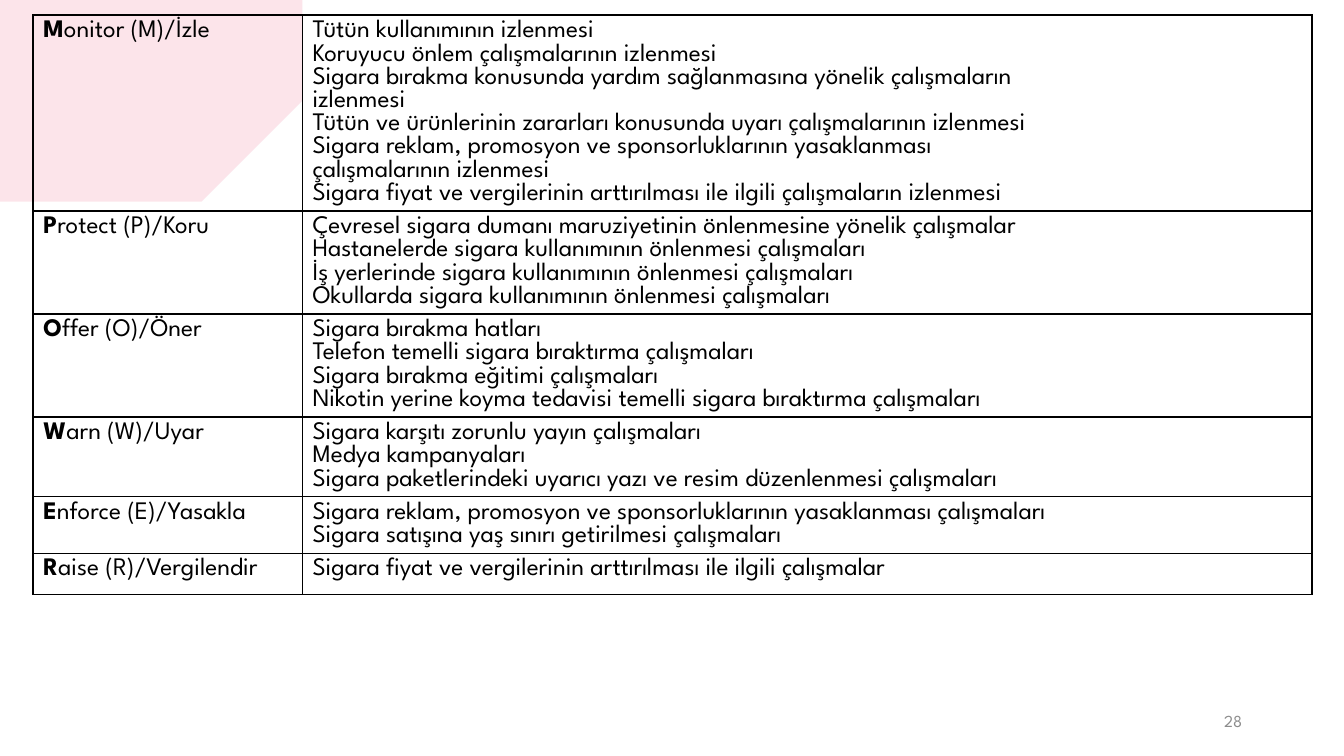
from lxml import etree
from pptx import Presentation
from pptx.dml.color import RGBColor
from pptx.enum.text import MSO_ANCHOR, PP_ALIGN
from pptx.oxml.ns import qn
from pptx.util import Inches, Pt

MIDDLE, RIGHT = MSO_ANCHOR.MIDDLE, PP_ALIGN.RIGHT

ROWS = [
    ("Monitor (M)/İzle", [
        "Tütün kullanımının izlenmesi",
        "Koruyucu önlem çalışmalarının izlenmesi",
        "Sigara bırakma konusunda yardım sağlanmasına yönelik çalışmaların",
        "izlenmesi",
        "Tütün ve ürünlerinin zararları konusunda uyarı çalışmalarının izlenmesi",
        "Sigara reklam, promosyon ve sponsorluklarının yasaklanması",
        "çalışmalarının izlenmesi",
        "Sigara fiyat ve vergilerinin arttırılması ile ilgili çalışmaların izlenmesi"]),
    ("Protect (P)/Koru", [
        "Çevresel sigara dumanı maruziyetinin önlenmesine yönelik çalışmalar",
        "Hastanelerde sigara kullanımının önlenmesi çalışmaları",
        "İş yerlerinde sigara kullanımının önlenmesi çalışmaları",
        "Okullarda sigara kullanımının önlenmesi çalışmaları"]),
    ("Offer (O)/Öner", [
        "Sigara bırakma hatları",
        "Telefon temelli sigara bıraktırma çalışmaları",
        "Sigara bırakma eğitimi çalışmaları",
        "Nikotin yerine koyma tedavisi temelli sigara bıraktırma çalışmaları"]),
    ("Warn (W)/Uyar", [
        "Sigara karşıtı zorunlu yayın çalışmaları",
        "Medya kampanyaları",
        "Sigara paketlerindeki uyarıcı yazı ve resim düzenlenmesi çalışmaları"]),
    ("Enforce (E)/Yasakla", [
        "Sigara reklam, promosyon ve sponsorluklarının yasaklanması çalışmaları",
        "Sigara satışına yaş sınırı getirilmesi çalışmaları"]),
    ("Raise (R)/Vergilendir", [
        "Sigara fiyat ve vergilerinin arttırılması ile ilgili çalışmalar"]),
]
PAGE_NUMBER = "28"

BRUSH_OUTLINE = [
    (0, 0.34), (0.25, 0.37), (1.51, 0.38), (2.48, 0.41), (2.8, 0.47),
    (2.53, 0.57), (2.62, 0.62), (2.38, 0.66), (2.75, 0.74), (2.51, 0.75),
    (2.73, 0.81), (2.9, 0.85), (2.63, 0.88), (3.3, 0.94), (3.18, 1.06),
    (2.83, 1.16), (2.74, 1.28), (3.08, 1.28), (2.69, 1.38), (2.52, 1.48),
    (2.63, 1.48), (1.97, 1.72), (1.02, 1.88), (0.65, 1.91), (0, 1.88),
]

THEME = {
    "font": "League Spartan", "body": 18, "small": 12,
    "text": "000000", "muted": "8C8C8C", "brush": "F07C98", "brush_alpha": 20,
    "outer": 1.5, "inner": 1,
}
COLS = [2.67, 10.01]
TABLE_LEFT, TABLE_TOP = 0.33, 0.15
LINE_HEIGHT, CELL_PADDING, MIN_ROW = 0.23, 0.1, 0.41


def add_run(p, text, size, color, bold=False):
    r = p.add_run()
    r.text = text
    r.font.name = THEME["font"]
    r.font.size = Pt(size)
    r.font.bold = bold
    r.font.color.rgb = RGBColor.from_string(color)


def add_brush(s):
    fb = s.shapes.build_freeform(*BRUSH_OUTLINE[0], scale=Inches(1))
    fb.add_line_segments(BRUSH_OUTLINE[1:], close=True)
    sp = fb.convert_to_shape()
    sp.shadow.inherit = False
    sp.line.fill.background()
    sp.fill.solid()
    sp.fill.fore_color.rgb = RGBColor.from_string(THEME["brush"])
    color = sp._element.spPr.find(qn("a:solidFill"))[0]
    etree.SubElement(color, qn("a:alpha"), val=str(THEME["brush_alpha"] * 1000))


def set_borders(cell, widths):
    tcPr = cell._tc.get_or_add_tcPr()
    for i, (side, width) in enumerate(widths.items()):
        ln = etree.Element(qn(f"a:ln{side}"), w=str(int(Pt(width))))
        fill = etree.SubElement(ln, qn("a:solidFill"))
        etree.SubElement(fill, qn("a:srgbClr"), val=THEME["text"])
        tcPr.insert(i, ln)


def add_policy_table(s):
    heights = [max(MIN_ROW, len(lines) * LINE_HEIGHT + CELL_PADDING) for _, lines in ROWS]
    table = s.shapes.add_table(len(ROWS), len(COLS), Inches(TABLE_LEFT), Inches(TABLE_TOP),
                               Inches(sum(COLS)), Inches(sum(heights))).table
    table.first_row = table.horz_banding = False
    for column, width in zip(table.columns, COLS):
        column.width = Inches(width)
    last_row, last_col = len(ROWS) - 1, len(COLS) - 1
    for i, (title, lines) in enumerate(ROWS):
        table.rows[i].height = Inches(heights[i])
        for j, paragraphs in enumerate(([title], lines)):
            cell = table.cell(i, j)
            cell.fill.background()
            outer = {"L": j == 0, "R": j == last_col, "T": i == 0, "B": i == last_row}
            set_borders(cell, {side: THEME["outer" if edge else "inner"]
                               for side, edge in outer.items()})
            tf = cell.text_frame
            for k, text in enumerate(paragraphs):
                p = tf.add_paragraph() if k else tf.paragraphs[0]
                if j == 0:
                    add_run(p, text[0], THEME["body"], THEME["text"], True)
                    text = text[1:]
                add_run(p, text, THEME["body"], THEME["text"])


def add_page_number(s):
    tf = s.shapes.add_textbox(Inches(9.42), Inches(6.95), Inches(3), Inches(0.4)).text_frame
    tf.word_wrap = True
    tf.vertical_anchor = MIDDLE
    p = tf.paragraphs[0]
    p.alignment = RIGHT
    add_run(p, PAGE_NUMBER, THEME["small"], THEME["muted"])


def main():
    prs = Presentation()
    prs.slide_width, prs.slide_height = Inches(13.33), Inches(7.5)
    s = prs.slides.add_slide(prs.slide_layouts[6])
    add_brush(s)
    add_policy_table(s)
    add_page_number(s)
    prs.save("out.pptx")


if __name__ == "__main__":
    main()
